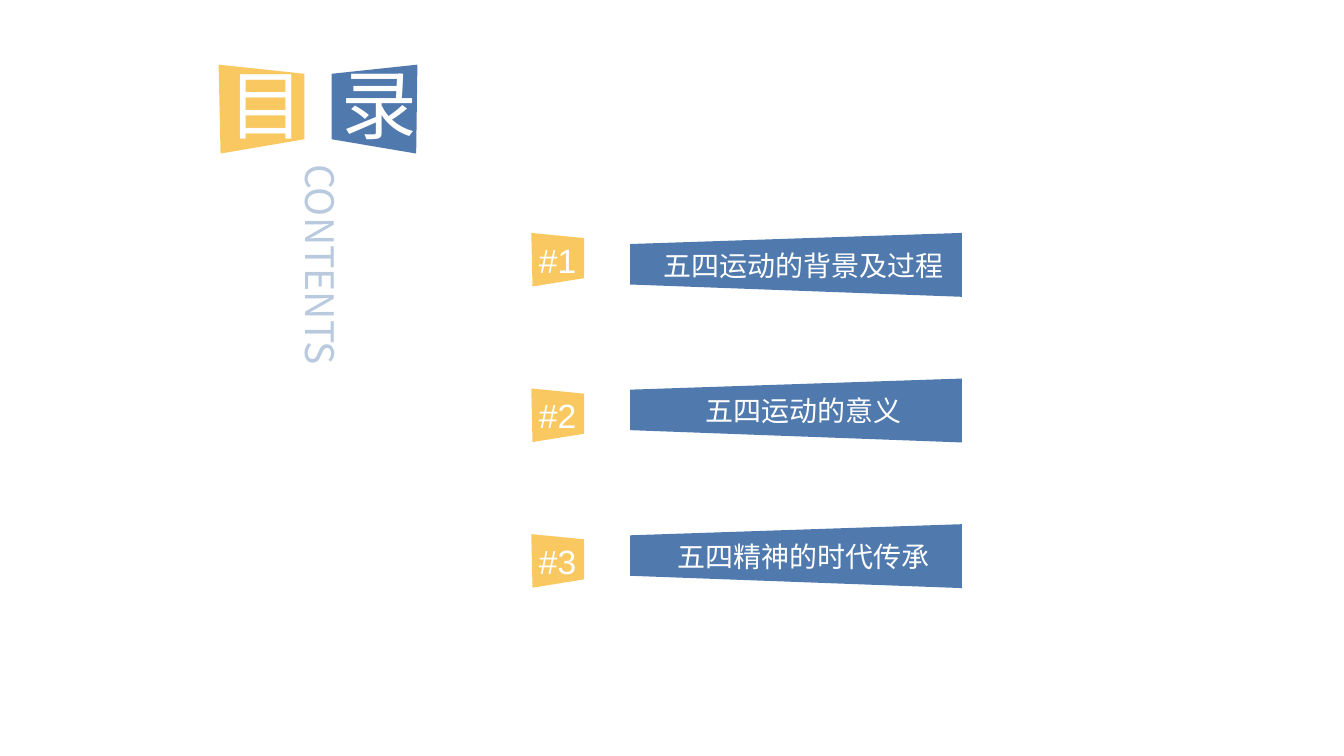
import pptx
import pptx.dml.color
import pptx.enum.text
import pptx.util
from dataclasses import dataclass

Cm = pptx.util.Cm
ALIGN = pptx.enum.text.PP_ALIGN
MIDDLE = pptx.enum.text.MSO_ANCHOR.MIDDLE


@dataclass(frozen=True)
class Theme:
    yellow: str = "FAC861"
    blue: str = "507AAE"
    pale_blue: str = "B9CADF"
    white: str = "FFFFFF"
    latin: str = "Arial"
    heading_font: str = "Noto Sans CJK JP"
    cjk: str = "Noto Sans CJK SC"
    heading: int = 54
    subtitle: int = 28
    number: int = 24
    topic: int = 20


THEME = Theme()

# Outlines in cm, measured from each shape's top left corner
HEADING_LEFT = [(0, 0), (2.16, 0.23), (2.16, 1.88), (0.05, 2.24)]
HEADING_RIGHT = [(2.16, 0), (2.13, 2.24), (0, 1.88), (0, 0.23)]
BADGE = [(0, 0), (1.33, 0.13), (1.33, 1.14), (0.03, 1.35)]
BAR = [(8.36, 0), (8.36, 1.61), (0, 1.3), (0, 0.28)]

TOPICS = ["五四运动的背景及过程", "五四运动的意义", "五四精神的时代传承"]
FIRST_ROW, ROW_PITCH = 5.87, 3.67
BADGE_DROPS = [0, 0.25, 0.25]


def rgb(color):
    return pptx.dml.color.RGBColor.from_string(color)


def write_text(sp, text, *, size, color=THEME.white, font=THEME.latin,
               cjk=THEME.cjk, align=ALIGN.CENTER, insets=(0, 0, 0, 0)):
    tf = sp.text_frame
    tf.word_wrap = True
    tf.auto_size = pptx.enum.text.MSO_AUTO_SIZE.NONE
    tf.vertical_anchor = MIDDLE
    tf.margin_left, tf.margin_top, tf.margin_right, tf.margin_bottom = map(Cm, insets)
    p = tf.paragraphs[0]
    p.alignment = align
    r = p.add_run()
    r.text = text
    r.font.size = pptx.util.Pt(size)
    r.font.name = font
    r.font.color.rgb = rgb(color)
    ea = pptx.oxml.parse_xml(
        '<a:ea xmlns:a="http://schemas.openxmlformats.org/drawingml/2006/main"'
        f' typeface="{cjk}"/>')
    r.font._element.find(pptx.oxml.ns.qn("a:latin")).addnext(ea)


def add_panel(s, left, top, outline, fill, text, **text_format):
    points = [(Cm(left + x), Cm(top + y)) for x, y in outline]
    builder = s.shapes.build_freeform(*points[0])
    builder.add_line_segments(points[1:], close=True)
    sp = builder.convert_to_shape()
    sp.shadow.inherit = False
    sp.fill.solid()
    sp.fill.fore_color.rgb = rgb(fill)
    sp.line.fill.background()
    write_text(sp, text, **text_format)


def add_vertical_title(s, text):
    sp = s.shapes.title
    sp.left, sp.top, sp.width, sp.height = Cm(7.24), Cm(4.14), Cm(1.7), Cm(7.54)
    write_text(sp, text, size=THEME.subtitle, color=THEME.pale_blue,
               font=THEME.cjk, align=ALIGN.LEFT)
    sp.text_frame._txBody.bodyPr.set("vert", "eaVert")


def add_heading(s):
    panels = [(5.51, HEADING_LEFT, THEME.yellow, "目"),
              (8.36, HEADING_RIGHT, THEME.blue, "录")]
    for left, outline, fill, text in panels:
        add_panel(s, left, 1.63, outline, fill, text, size=THEME.heading,
                  font=THEME.heading_font, cjk=THEME.heading_font,
                  insets=(0.25, 0.13, 0.25, 0.41))


def add_topics(s):
    for i, (topic, drop) in enumerate(zip(TOPICS, BADGE_DROPS)):
        top = FIRST_ROW + i * ROW_PITCH
        add_panel(s, 13.39, top + drop, BADGE, THEME.yellow, f"#{i + 1}",
                  size=THEME.number)
        add_panel(s, 15.88, top, BAR, THEME.blue, topic,
                  size=THEME.topic, insets=(0.5, 0, 0.1, 0))


def main():
    prs = pptx.Presentation()
    prs.slide_width, prs.slide_height = Cm(33.87), Cm(19.05)
    s = prs.slides.add_slide(prs.slide_layouts[5])

    # Heading and its vertical title
    add_heading(s)
    add_vertical_title(s, "CONTENTS")

    # Numbered topics
    add_topics(s)

    prs.save("out.pptx")


if __name__ == "__main__":
    main()
